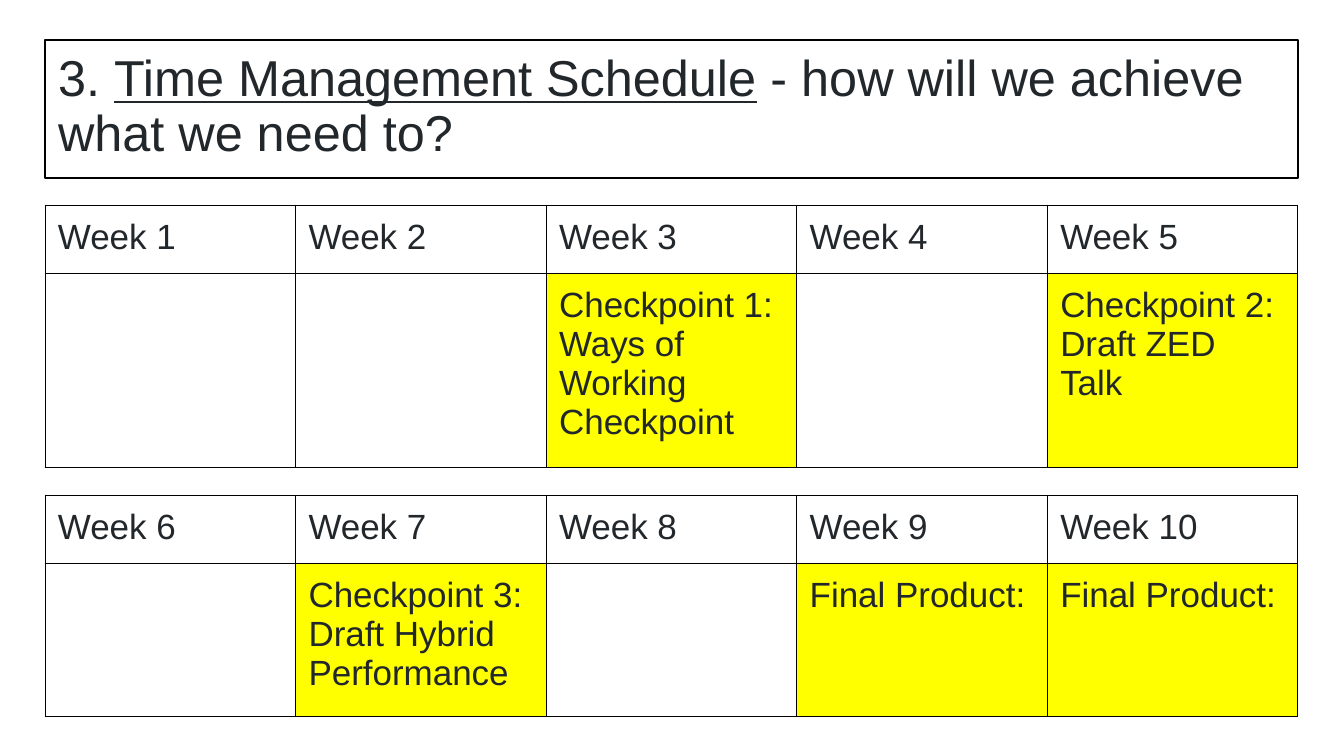
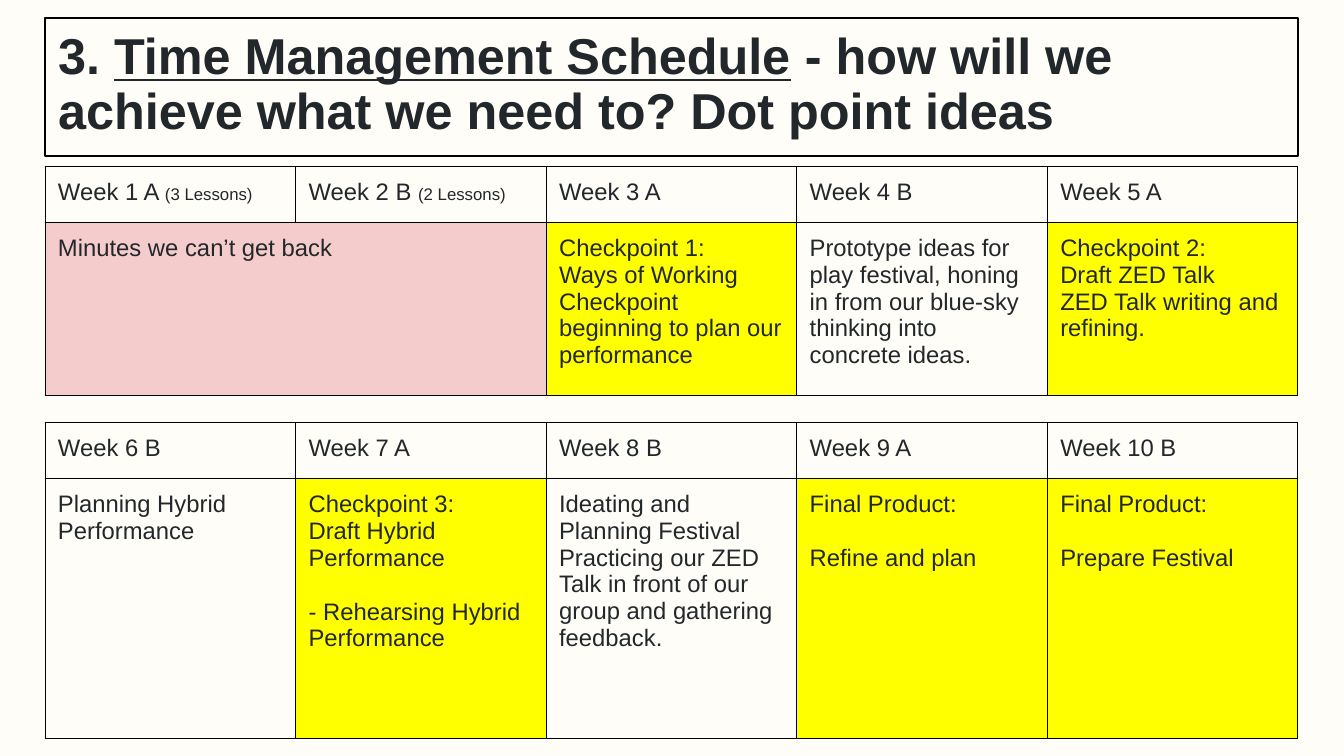
from lxml import etree
from pptx import Presentation
from pptx import util as u
from pptx.dml.color import RGBColor
from pptx.enum import text
from pptx.oxml.ns import qn

PX = 9144000 / 1008  # EMU in one px
COLORS = {"ink": "22272B", "line": "000000", "white": "FFFFFF", "cream": "FFFDF8",
          "due": "FFFF00", "lost": "F4CCCC"}
LEFT, WIDTH, WEEKS_PER_TABLE, PAD = 45, 1253, 5, 13
MARGINS = dict.fromkeys(("margin_left", "margin_right", "margin_top", "margin_bottom"),
                        u.Emu(round(PAD * PX)))
TITLE_FRAME = {**MARGINS, "word_wrap": True, "auto_size": text.MSO_AUTO_SIZE.NONE,
               "vertical_anchor": text.MSO_ANCHOR.TOP}
NOTE_SIZE = 12

# A blank line in a cell's text stands for a gap before the next paragraph.
SLIDES = [
    {"back": "white", "top": 40, "bold": False, "size": 25,
     "ending": " - how will we achieve what we need to?",
     "tables": [
         {"top": 205, "rows": (68, 194), "merge": None,
          "weeks": ["Week 1", "Week 2", "Week 3", "Week 4", "Week 5"],
          "plans": ["", "", "Checkpoint 1:\nWays of Working Checkpoint", "",
                    "Checkpoint 2:\nDraft ZED Talk"],
          "fills": {2: "due", 4: "due"}},
         {"top": 495, "rows": (68, 153), "merge": None,
          "weeks": ["Week 6", "Week 7", "Week 8", "Week 9", "Week 10"],
          "plans": ["", "Checkpoint 3:\nDraft Hybrid Performance", "",
                    "Final Product:", "Final Product:"],
          "fills": {1: "due", 3: "due", 4: "due"}}]},
    {"back": "cream", "top": 18, "bold": True, "size": 17,
     "ending": " - how will we achieve what we need to? Dot point ideas",
     "tables": [
         {"top": 166, "rows": (56, 173), "merge": (0, 1),
          "weeks": ["Week 1 A (3 Lessons)", "Week 2 B (2 Lessons)", "Week 3 A",
                    "Week 4 B", "Week 5 A"],
          "plans": ["Minutes we can’t get back", "",
                    "Checkpoint 1:\nWays of Working Checkpoint beginning to plan our performance",
                    "Prototype ideas for play festival, honing in from our blue-sky "
                    "thinking into concrete ideas.",
                    "Checkpoint 2:\nDraft ZED Talk\nZED Talk writing and refining."],
          "fills": {0: "lost", 2: "due", 4: "due"}},
         {"top": 422, "rows": (56, 260), "merge": None,
          "weeks": ["Week 6 B", "Week 7 A", "Week 8 B", "Week 9 A", "Week 10 B"],
          "plans": ["Planning Hybrid Performance",
                    "Checkpoint 3:\nDraft Hybrid Performance\n\n- Rehearsing Hybrid Performance",
                    "Ideating and Planning Festival\nPracticing our ZED Talk in front of "
                    "our group and gathering feedback.",
                    "Final Product:\n\nRefine and plan",
                    "Final Product:\n\nPrepare Festival"],
          "fills": {1: "due", 3: "due", 4: "due"}}]},
]


def add_run(paragraph, words, size, **formats):
    run = paragraph.add_run()
    run.text = words
    for name, value in {"name": "Arial", "size": u.Pt(size), **formats}.items():
        setattr(run.font, name, value)
    run.font.color.rgb = RGBColor.from_string(COLORS["ink"])


def fill_cell(cell, words, size, fill):
    """Write the text and set margins, borders and fill."""
    for name, value in MARGINS.items():
        setattr(cell, name, value)
    frame = cell.text_frame
    gap = False
    for i, line in enumerate(words.split("\n")):
        if i and not line:
            gap = True
            continue
        paragraph = frame.add_paragraph() if i else frame.paragraphs[0]
        if gap:
            paragraph.space_before = u.Pt(size * 1.15)
            gap = False
        main, bracket, note = line.partition("(")
        if main:
            add_run(paragraph, main, size)
        if note:
            add_run(paragraph, bracket + note, NOTE_SIZE)
    properties = cell._tc.get_or_add_tcPr()
    for side in ("a:lnL", "a:lnR", "a:lnT", "a:lnB"):
        border = etree.SubElement(properties, qn(side), w=str(u.Pt(0.75)))
        solid = etree.SubElement(border, qn("a:solidFill"))
        etree.SubElement(solid, qn("a:srgbClr"), val=COLORS["line"])
    if fill:
        cell.fill.solid()
        cell.fill.fore_color.rgb = RGBColor.from_string(COLORS[fill])
    else:
        cell.fill.background()


deck = Presentation()
deck.slide_width, deck.slide_height = round(1344 * PX), round(756 * PX)

for page in SLIDES:
    slide = deck.slides.add_slide(deck.slide_layouts[5])
    slide.background.fill.solid()
    slide.background.fill.fore_color.rgb = RGBColor.from_string(COLORS[page["back"]])

    title = slide.shapes.title
    title.left, title.top, title.width, title.height = (
        round(n * PX) for n in (LEFT, page["top"], WIDTH, 138))
    title.line.color.rgb = RGBColor.from_string(COLORS["line"])
    title.line.width = u.Pt(1.5)
    for name, value in TITLE_FRAME.items():
        setattr(title.text_frame, name, value)
    heading = title.text_frame.paragraphs[0]
    heading.alignment, heading.line_spacing = text.PP_ALIGN.LEFT, 0.9
    for words, underline in (("3. ", False), ("Time Management Schedule", True),
                             (page["ending"], False)):
        add_run(heading, words, 36, bold=page["bold"], underline=underline)

    for block in page["tables"]:
        table = slide.shapes.add_table(
            2, WEEKS_PER_TABLE, *(round(n * PX) for n in (
                LEFT, block["top"], WIDTH, sum(block["rows"])))).table
        table.first_row = table.horz_banding = False
        for row, height in zip(table.rows, block["rows"]):
            row.height = round(height * PX)
        for i, (week, plan) in enumerate(zip(block["weeks"], block["plans"])):
            table.columns[i].width = round(WIDTH * PX / WEEKS_PER_TABLE)
            fill_cell(table.cell(0, i), week, page["size"], None)
            fill_cell(table.cell(1, i), plan, page["size"], block["fills"].get(i))
        if block["merge"]:
            first, last = block["merge"]
            table.cell(1, first).merge(table.cell(1, last))

deck.save("out.pptx")
